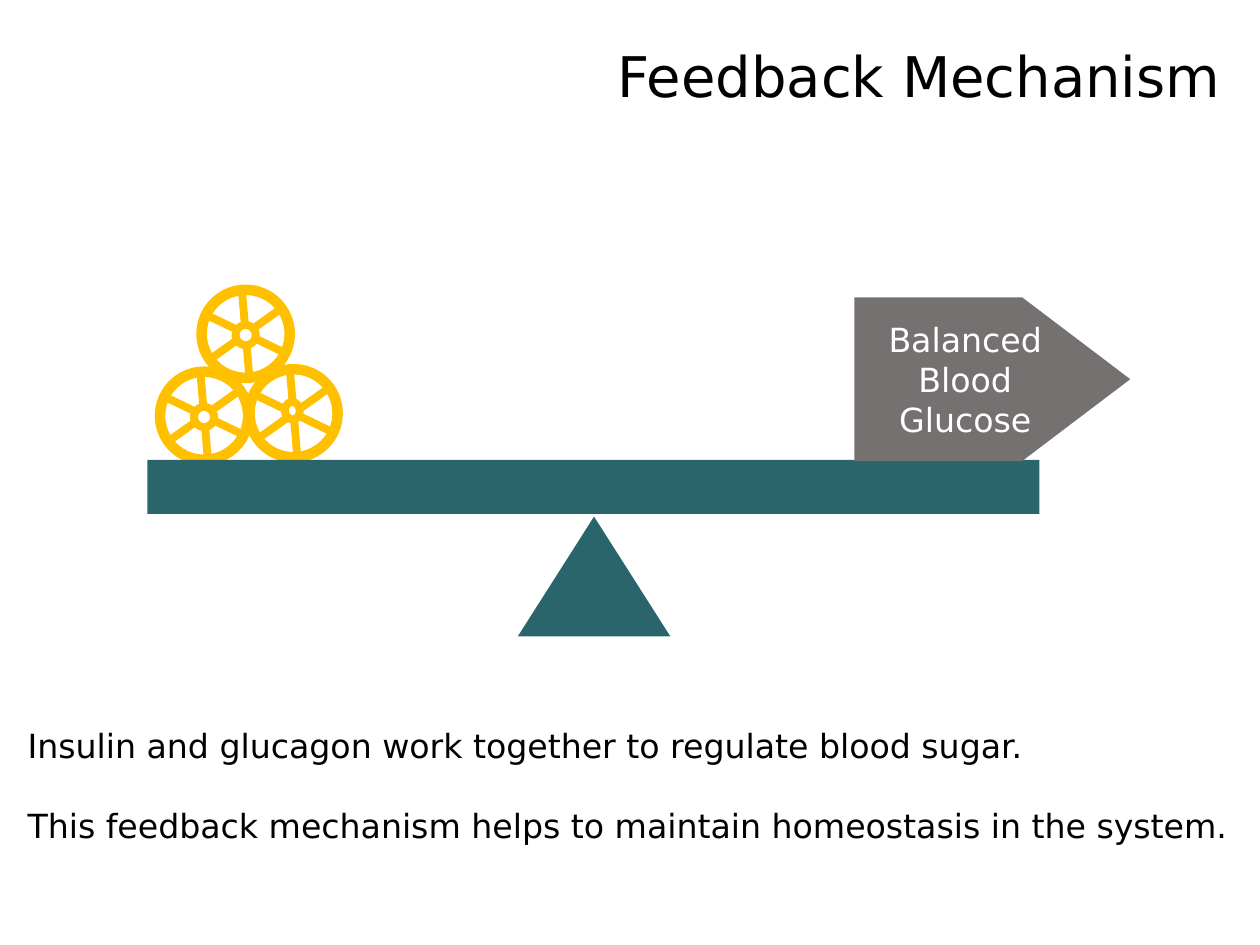
"""Build the feedback mechanism slide with a balance of wheels and blood glucose."""
from dataclasses import dataclass

from lxml import etree
from pptx import Presentation
from pptx.dml.color import RGBColor
from pptx.enum import shapes, text
from pptx.oxml import ns
from pptx.util import Inches, Pt

GOLD = RGBColor(0xFF, 0xC0, 0x00)
TEAL = RGBColor(0x2B, 0x65, 0x6C)
GRAY = RGBColor(0x76, 0x71, 0x71)
WHITE = RGBColor(0xFF, 0xFF, 0xFF)
BLACK = RGBColor(0x00, 0x00, 0x00)
FONT = "DejaVu Sans"
RIM_SIZE = 0.7
TILT = 354.8
SPOKE_ENDS = ((0.28, -0.2), (-0.03, -0.35), (-0.31, -0.15))


@dataclass
class Wheel:
    center_x: float
    center_y: float
    hub_x: float
    hub_y: float
    hub_width: float
    hub_height: float


WHEELS = (
    Wheel(1.62, 3.3, 1.62, 3.31, 0.16, 0.16),
    Wheel(2.33, 3.28, 2.32, 3.26, 0.12, 0.14),
    Wheel(1.95, 2.65, 1.95, 2.66, 0.16, 0.16),
)


def add_spoke(slide, wheel: Wheel, dx: float, dy: float) -> None:
    """Draw one spoke across the whole wheel."""
    spoke = slide.shapes.add_connector(
        shapes.MSO_CONNECTOR.STRAIGHT,
        Inches(wheel.center_x + dx), Inches(wheel.center_y + dy),
        Inches(wheel.center_x - dx), Inches(wheel.center_y - dy))
    spoke.line.color.rgb = GOLD
    spoke.line.width = Pt(4.5)
    etree.SubElement(spoke._element.spPr, ns.qn("a:effectLst"))


def add_ring(slide, x: float, y: float, width: float, height: float,
             line_width: float, fill: RGBColor | None = None) -> None:
    """Draw a tilted gold ellipse around a center."""
    ring = slide.shapes.add_shape(
        shapes.MSO_SHAPE.OVAL, Inches(x - width / 2), Inches(y - height / 2),
        Inches(width), Inches(height))
    ring.shadow.inherit = False
    ring.rotation = TILT
    ring.line.color.rgb = GOLD
    ring.line.width = Pt(line_width)
    if fill is None:
        ring.fill.background()
    else:
        ring.fill.solid()
        ring.fill.fore_color.rgb = fill


def add_wheel(slide, wheel: Wheel) -> None:
    """Draw spokes, rim and hub of a wheel."""
    for dx, dy in SPOKE_ENDS:
        add_spoke(slide, wheel, dx, dy)
    add_ring(slide, wheel.center_x, wheel.center_y, RIM_SIZE, RIM_SIZE, 6)
    add_ring(slide, wheel.hub_x, wheel.hub_y, wheel.hub_width, wheel.hub_height, 4.5, WHITE)


def add_block(slide, kind: shapes.MSO_SHAPE, left: float, top: float,
              width: float, height: float, color: RGBColor):
    """Draw a filled shape without an outline."""
    block = slide.shapes.add_shape(
        kind, Inches(left), Inches(top), Inches(width), Inches(height))
    block.shadow.inherit = False
    block.fill.solid()
    block.fill.fore_color.rgb = color
    block.line.fill.background()
    return block


def format_paragraph(paragraph, size: float, color: RGBColor,
                     alignment: text.PP_ALIGN) -> None:
    """Set the font and alignment of a paragraph."""
    paragraph.alignment = alignment
    paragraph.font.name = FONT
    paragraph.font.size = Pt(size)
    paragraph.font.color.rgb = color


def add_title(slide) -> None:
    """Place the title at the top right."""
    title = slide.shapes.title
    title.left, title.top = Inches(4.15), Inches(0.28)
    title.width, title.height = Inches(5.65), Inches(0.65)
    frame = title.text_frame
    frame.text = "Feedback Mechanism"
    frame.margin_left = frame.margin_right = Inches(0.11)
    frame.margin_top = frame.margin_bottom = Inches(0.05)
    frame.vertical_anchor = text.MSO_ANCHOR.TOP
    frame.auto_size = text.MSO_AUTO_SIZE.SHAPE_TO_FIT_TEXT
    format_paragraph(frame.paragraphs[0], 32, BLACK, text.PP_ALIGN.RIGHT)


def add_balance(slide) -> None:
    """Draw the beam, its pivot and the labelled arrow."""
    add_block(slide, shapes.MSO_SHAPE.RECTANGLE, 1.17, 3.65, 7.08, 0.43, TEAL)
    add_block(slide, shapes.MSO_SHAPE.ISOSCELES_TRIANGLE, 4.11, 4.1, 1.21, 0.95, TEAL)
    arrow = add_block(slide, shapes.MSO_SHAPE.PENTAGON, 6.78, 2.36, 2.19, 1.3, GRAY)
    arrow.adjustments[0] = 0.66
    frame = arrow.text_frame
    frame.text = "Balanced Blood Glucose"
    frame.word_wrap = True
    frame.vertical_anchor = text.MSO_ANCHOR.MIDDLE
    format_paragraph(frame.paragraphs[0], 19, WHITE, text.PP_ALIGN.CENTER)


def add_explanation(slide) -> None:
    """Write the two sentences below the balance."""
    box = slide.shapes.add_textbox(Inches(0.12), Inches(5.71), Inches(9.75), Inches(1.06))
    frame = box.text_frame
    frame.word_wrap = True
    frame.auto_size = text.MSO_AUTO_SIZE.SHAPE_TO_FIT_TEXT
    frame.text = ("Insulin and glucagon work together to regulate blood sugar.\n"
                  "This feedback mechanism helps to maintain homeostasis in the system.")
    for paragraph in frame.paragraphs:
        format_paragraph(paragraph, 19, BLACK, text.PP_ALIGN.LEFT)
    frame.paragraphs[1].space_before = Pt(23)


def main() -> None:
    """Create and save the presentation."""
    presentation = Presentation()
    presentation.slide_width = Inches(10)
    presentation.slide_height = Inches(7.5)
    slide = presentation.slides.add_slide(presentation.slide_layouts[5])
    add_title(slide)
    for wheel in WHEELS:
        add_wheel(slide, wheel)
    add_balance(slide)
    add_explanation(slide)
    presentation.save("out.pptx")


if __name__ == "__main__":
    main()
